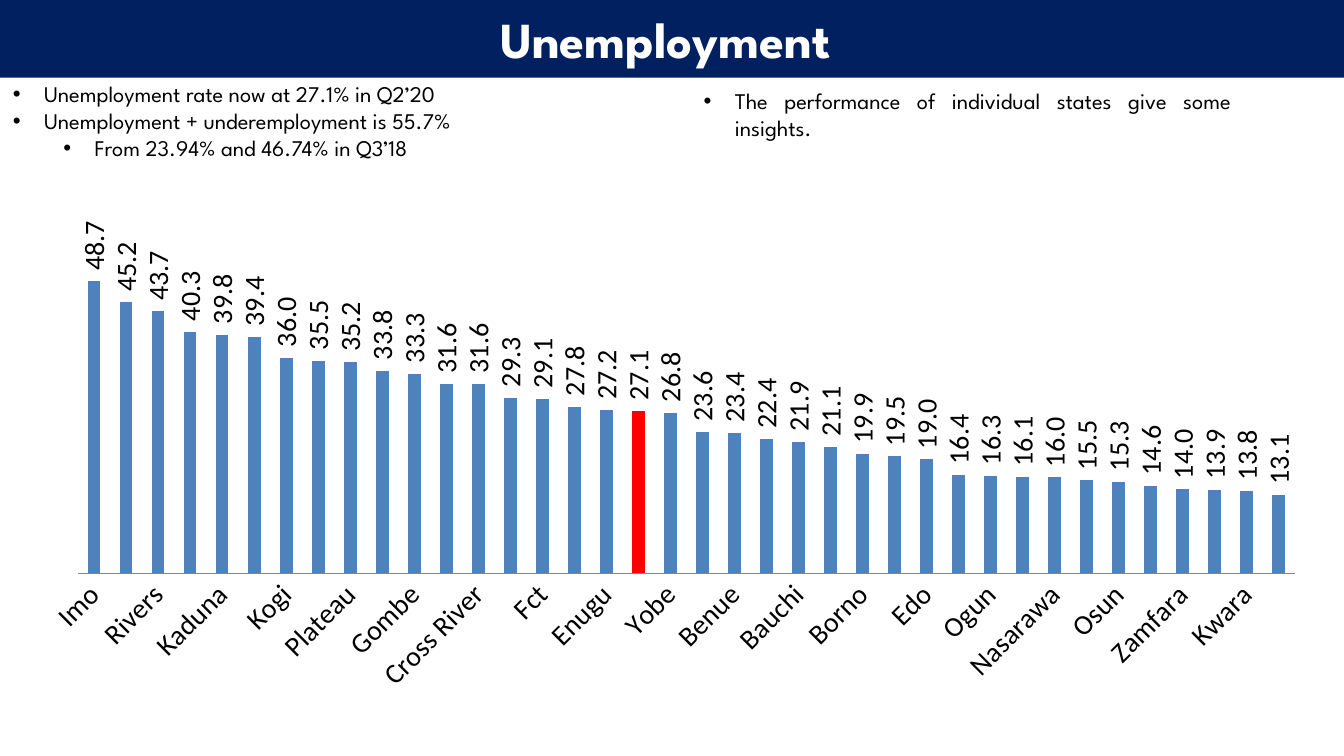
from dataclasses import dataclass

from lxml import etree
from pptx import Presentation
from pptx.chart.data import CategoryChartData
from pptx.dml.color import RGBColor
from pptx.enum.chart import XL_CHART_TYPE, XL_LABEL_POSITION, XL_TICK_MARK
from pptx.enum.shapes import MSO_SHAPE
from pptx.enum.text import MSO_ANCHOR, PP_ALIGN
from pptx.oxml import parse_xml
from pptx.oxml.ns import nsdecls, qn
from pptx.util import Inches, Pt

COLUMNS = XL_CHART_TYPE.COLUMN_CLUSTERED
OUTSIDE = XL_LABEL_POSITION.OUTSIDE_END
NO_TICK = XL_TICK_MARK.NONE
RECTANGLE = MSO_SHAPE.RECTANGLE
MIDDLE = MSO_ANCHOR.MIDDLE
CENTER, JUSTIFY = PP_ALIGN.CENTER, PP_ALIGN.JUSTIFY

TEXT_FONT, CHART_FONT = "League Spartan", "Calibri"
NAVY, WHITE, BLACK = "002060", "FFFFFF", "000000"
BLUE, RED, GRAY = "4F81BD", "FF0000", "868686"
LABEL_FORMAT = '_-* #,##0.0_-;\\-* #,##0.0_-;_-* "-"??_-;'
HIGHLIGHT = "National"

RATES = {
    "Imo": 48.7, "Akwa-Ibom": 45.2, "Rivers": 43.7, "Delta": 40.3,
    "Kaduna": 39.8, "Taraba": 39.4, "Kogi": 36, "Abia": 35.5,
    "Plateau": 35.2, "Niger": 33.8, "Gombe": 33.3, "Kano": 31.6,
    "Cross River": 31.6, "Adamawa": 29.3, "Fct": 29.1, "Bayelsa": 27.8,
    "Enugu": 27.2, "National": 27.1, "Yobe": 26.8, "Katsina": 23.6,
    "Benue": 23.4, "Jigawa": 22.4, "Bauchi": 21.9, "Ondo": 21.1,
    "Borno": 19.9, "Lagos": 19.5, "Edo": 19, "Oyo": 16.4,
    "Ogun": 16.3, "Kebbi": 16.1, "Nasarawa": 16, "Ekiti": 15.5,
    "Osun": 15.3, "Ebonyi": 14.6, "Zamfara": 14, "Sokoto": 13.9,
    "Kwara": 13.8, "Anambra": 13.1,
}


@dataclass
class Bullet:
    text: str
    level: int = 0


@dataclass
class BulletBox:
    left: float
    top: float
    height: float
    bullets: list[Bullet]
    width: float = 5.43


BULLET_BOXES = [
    BulletBox(0.03, 0.75, 0.91, [
        Bullet("Unemployment rate now at 27.1% in Q2’20"),
        Bullet("Unemployment + underemployment is 55.7%"),
        Bullet("From 23.94% and 46.74% in Q3’18", level=1),
    ]),
    BulletBox(6.88, 0.82, 0.64, [
        Bullet("The performance of individual states give some insights."),
    ]),
]


def color(value: str) -> RGBColor:
    return RGBColor.from_string(value)


def add_bullet(para, level: int) -> None:
    para.level = level
    properties = para._p.get_or_add_pPr()
    properties.set("marL", str(Inches(0.31 + 0.5 * level)))
    properties.set("indent", str(Inches(-0.31)))
    font = etree.SubElement(properties, qn("a:buFont"))
    font.set("typeface", "Arial")
    mark = etree.SubElement(properties, qn("a:buChar"))
    mark.set("char", "•")


def write_text(para, text: str, *, size: float, fill: str = BLACK,
               bold: bool = False, align=JUSTIFY) -> None:
    para.alignment = align
    span = para.add_run()
    span.text = text
    span.font.name = TEXT_FONT
    span.font.size = Pt(size)
    span.font.bold = bold
    span.font.color.rgb = color(fill)


def add_title(page) -> None:
    banner = page.shapes.add_shape(
        RECTANGLE, 0, 0, Inches(13.33), Inches(0.77))
    banner.shadow.inherit = False
    banner.fill.solid()
    banner.fill.fore_color.rgb = color(NAVY)
    banner.line.fill.background()
    banner.text_frame.vertical_anchor = MIDDLE
    write_text(banner.text_frame.paragraphs[0], "Unemployment ",
               size=36, fill=WHITE, bold=True, align=CENTER)


def add_bullet_box(page, item: BulletBox) -> None:
    box = page.shapes.add_textbox(Inches(item.left), Inches(item.top),
                                  Inches(item.width), Inches(item.height))
    frame = box.text_frame
    frame.word_wrap = True
    for index, bullet in enumerate(item.bullets):
        para = frame.add_paragraph() if index else frame.paragraphs[0]
        add_bullet(para, bullet.level)
        write_text(para, bullet.text, size=16)


def style_labels(labels, degrees: int) -> None:
    labels.font.size = Pt(20)
    labels.font.name = CHART_FONT
    labels.font.color.rgb = color(BLACK)
    body = labels._element.find(f"{qn('c:txPr')}/{qn('a:bodyPr')}")
    body.set("rot", str(degrees * 60000))
    body.set("vert", "horz")


def place_plot(chart, x: float, y: float, width: float, height: float) -> None:
    area = chart._chartSpace.chart.plotArea
    for old in area.findall(qn("c:layout")):
        area.remove(old)
    area.insert(0, parse_xml(
        f'<c:layout {nsdecls("c")}><c:manualLayout>'
        '<c:layoutTarget val="inner"/>'
        '<c:xMode val="edge"/><c:yMode val="edge"/>'
        f'<c:x val="{x}"/><c:y val="{y}"/><c:w val="{width}"/><c:h val="{height}"/>'
        '</c:manualLayout></c:layout>'))


def add_rate_chart(page) -> None:
    data = CategoryChartData()
    data.categories = list(RATES)
    data.add_series("Series 1", list(RATES.values()))
    chart = page.shapes.add_chart(
        COLUMNS, Inches(0.26), Inches(2.02),
        Inches(12.84), Inches(4.96), data).chart
    chart.has_legend = False
    chart.has_title = False
    chart.font.name = CHART_FONT
    chart.font.size = Pt(20)
    chart.font.color.rgb = color(BLACK)
    place_plot(chart, 0.04, 0.02, 0.94, 0.72)

    # Columns, with the national rate picked out
    plot = chart.plots[0]
    plot.vary_by_categories = False
    plot.gap_width = 150
    plot.overlap = -25
    series = plot.series[0]
    national = series.points[list(RATES).index(HIGHLIGHT)]
    for part, fill in ((series, BLUE), (national, RED)):
        part.format.fill.solid()
        part.format.fill.fore_color.rgb = color(fill)

    # Upright value labels
    labels = series.data_labels
    labels.show_value = True
    labels.number_format = LABEL_FORMAT
    labels.number_format_is_linked = False
    labels.position = OUTSIDE
    style_labels(labels, -90)

    # Axes: every second state is named
    states = chart.category_axis
    states.major_tick_mark = NO_TICK
    states.format.line.color.rgb = color(GRAY)
    style_labels(states.tick_labels, -45)
    skip = etree.Element(qn("c:tickLblSkip"))
    skip.set("val", "2")
    states._element.find(qn("c:noMultiLvlLbl")).addprevious(skip)
    values = chart.value_axis
    values.minimum_scale = 0
    values.maximum_scale = 60
    values.has_major_gridlines = False
    values.visible = False


def main() -> None:
    deck = Presentation()
    deck.slide_width, deck.slide_height = Inches(13.33), Inches(7.5)
    page = deck.slides.add_slide(deck.slide_layouts[6])
    add_title(page)
    add_rate_chart(page)
    for item in BULLET_BOXES:
        add_bullet_box(page, item)
    deck.save("out.pptx")


if __name__ == "__main__":
    main()
